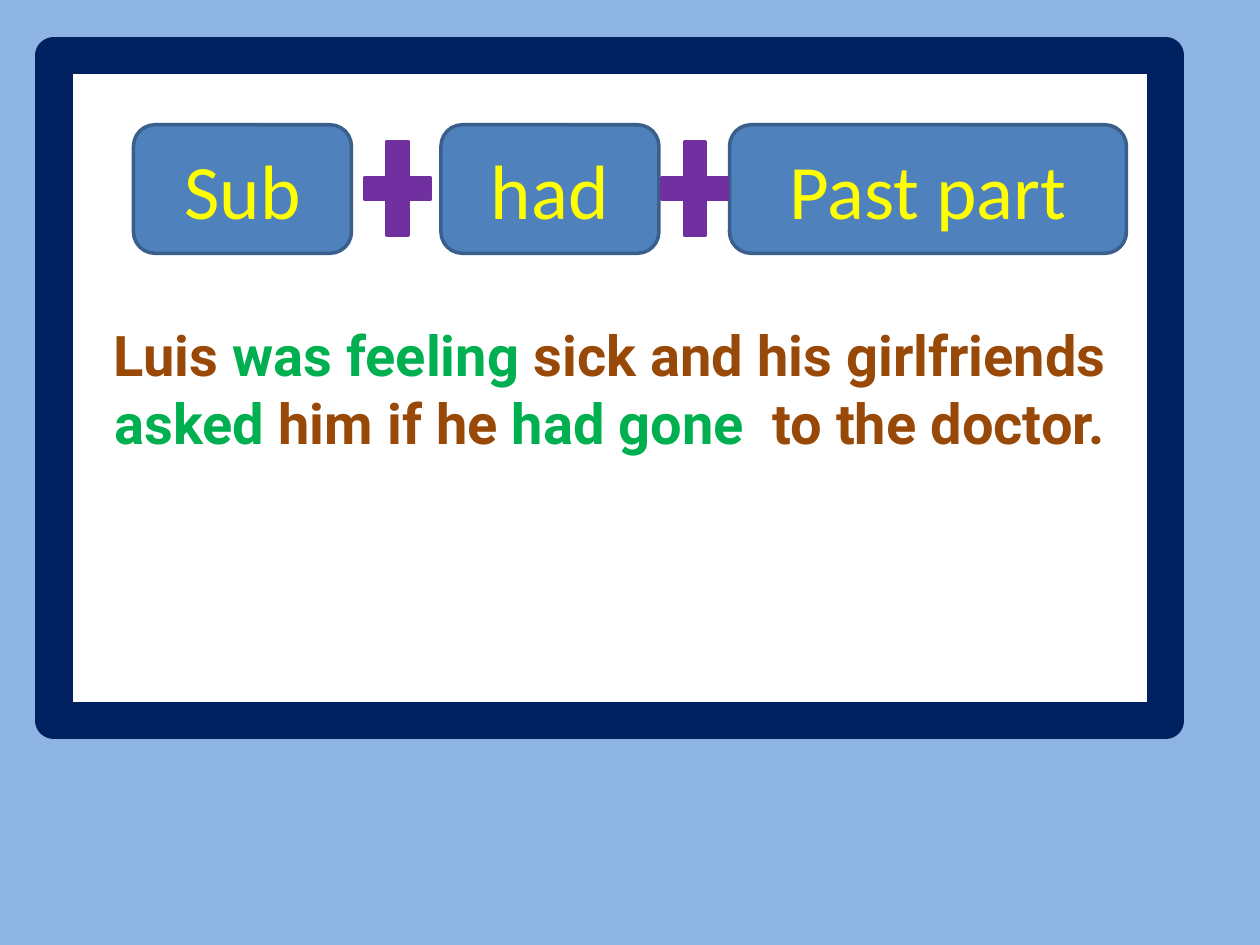
from dataclasses import dataclass

import pptx
import pptx.dml.color
import pptx.enum.shapes
import pptx.enum.text
import pptx.util

Inches = pptx.util.Inches
Shape = pptx.enum.shapes.MSO_SHAPE


@dataclass(frozen=True)
class Theme:
    background: str = "8EB4E3"
    board: str = "FFFFFF"
    frame: str = "002060"
    box: str = "4F81BD"
    box_line: str = "3A5F8C"
    box_text: str = "FFFF00"
    plus: str = "7030A0"
    sentence: str = "984807"
    verb: str = "00B050"
    box_font: str = "Calibri"
    sentence_font: str = "Roboto"
    box_size: float = 44
    sentence_size: float = 32
    frame_width: float = 21.5
    line_width: float = 2


def rgb(value):
    return pptx.dml.color.RGBColor.from_string(value)


class SlideBuilder:
    def __init__(self, presentation, theme):
        self.theme = theme
        self.slide = presentation.slides.add_slide(presentation.slide_layouts[6])
        fill = self.slide.background.fill
        fill.solid()
        fill.fore_color.rgb = rgb(theme.background)

    def add_shape(self, kind, position, fill, line, line_width):
        shape = self.slide.shapes.add_shape(kind, *map(Inches, position))
        shape.shadow.inherit = False
        shape.fill.solid()
        shape.fill.fore_color.rgb = rgb(fill)
        shape.line.color.rgb = rgb(line)
        shape.line.width = pptx.util.Pt(line_width)
        return shape

    def add_text(self, shape, runs, font_format):
        frame = shape.text_frame
        frame.word_wrap = True
        frame.vertical_anchor = pptx.enum.text.MSO_ANCHOR.MIDDLE
        paragraph = frame.paragraphs[0]
        paragraph.alignment = pptx.enum.text.PP_ALIGN.CENTER
        for text, color in runs:
            run = paragraph.add_run()
            run.text = text
            run.font.color.rgb = rgb(color)
            for name, value in font_format.items():
                setattr(run.font, name, value)

    def add_board(self, position, runs):
        theme = self.theme
        shape = self.add_shape(Shape.RECTANGLE, position, theme.board, theme.frame, theme.frame_width)
        font_format = {
            "name": theme.sentence_font,
            "size": pptx.util.Pt(theme.sentence_size),
            "bold": True,
        }
        self.add_text(shape, runs, font_format)

    def add_box(self, position, text):
        theme = self.theme
        shape = self.add_shape(Shape.ROUNDED_RECTANGLE, position, theme.box, theme.box_line, theme.line_width)
        font_format = {"name": theme.box_font, "size": pptx.util.Pt(theme.box_size)}
        self.add_text(shape, [(text, theme.box_text)], font_format)

    def add_plus(self, position):
        theme = self.theme
        self.add_shape(Shape.MATH_PLUS, position, theme.plus, theme.plus, theme.line_width)


def main():
    theme = Theme()
    presentation = pptx.Presentation()
    presentation.slide_width = Inches(10)
    presentation.slide_height = Inches(7.5)
    builder = SlideBuilder(presentation, theme)

    sentence = [
        ("Luis ", theme.sentence),
        ("was feeling ", theme.verb),
        ("sick and his girlfriends ", theme.sentence),
        ("asked ", theme.verb),
        ("him if he ", theme.sentence),
        ("had gone  ", theme.verb),
        ("to the doctor.", theme.sentence),
    ]
    builder.add_board((0.43, 0.44, 8.82, 5.28), sentence)

    formula_top = 0.99
    for text, left, width in [("Sub", 1.06, 1.73), ("had", 3.5, 1.73), ("Past part", 5.79, 3.15)]:
        builder.add_box((left, formula_top, width, 1.02), text)
    for left in (2.8, 5.16):
        builder.add_plus((left, formula_top, 0.71, 1.01))

    presentation.save("out.pptx")


if __name__ == "__main__":
    main()
